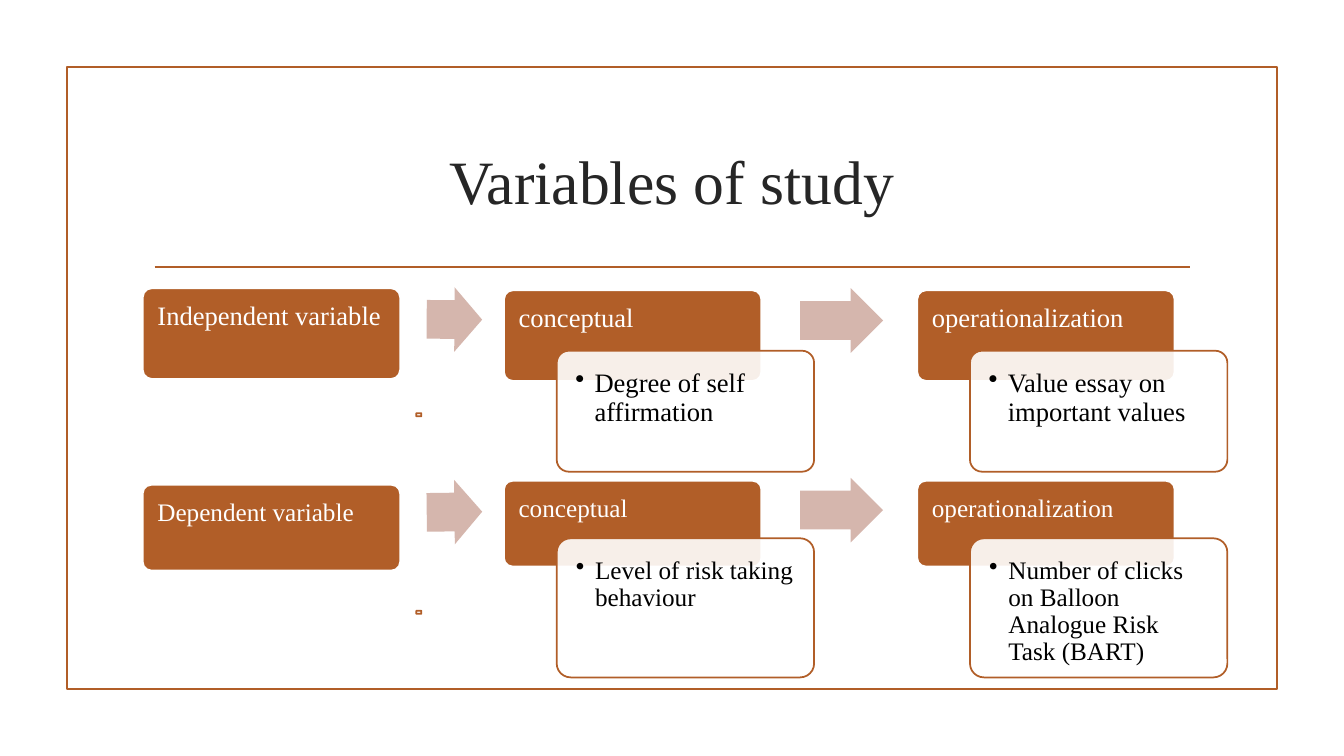
from lxml import etree
from pptx import Presentation
from pptx import util as u
from pptx.dml.color import RGBColor
from pptx.enum import shapes, text
from pptx.oxml.ns import qn

RUST = RGBColor(0xB1, 0x5E, 0x28)
ROSE = RGBColor(0xD5, 0xB6, 0xAD)
WHITE = RGBColor(0xFF, 0xFF, 0xFF)
BLACK = RGBColor(0, 0, 0)
CHARCOAL = RGBColor(0x26, 0x26, 0x26)

COLUMNS, ROWS = 40, 22.5
CARD_WIDTH = 7.66
DETAIL_SHIFT = 1.57
LABEL_LEFT, CONCEPT_LEFT, OPERATION_LEFT = 4.25, 15, 27.3


def write(frame, content, size, color, align=text.PP_ALIGN.LEFT,
          anchor=text.MSO_ANCHOR.TOP, inset=0.1, spacing=None, bullet=False):
    frame.word_wrap = True
    frame.auto_size = text.MSO_AUTO_SIZE.NONE
    frame.vertical_anchor = anchor
    frame.margin_left = frame.margin_right = u.Inches(inset)
    frame.margin_top = frame.margin_bottom = u.Inches(inset)
    paragraph = frame.paragraphs[0]
    if bullet:
        properties = paragraph._p.get_or_add_pPr()
        properties.set("marL", str(u.Inches(0.19)))
        properties.set("indent", str(-u.Inches(0.19)))
        etree.SubElement(properties, qn("a:buChar"), char="•")
    paragraph.alignment = align
    if spacing:
        paragraph.line_spacing = spacing
    run = paragraph.add_run()
    run.text = content
    run.font.name = "Times New Roman"
    run.font.size = u.Pt(size)
    run.font.color.rgb = color


class VariablesSlide:
    """Places elements on a grid of COLUMNS by ROWS cells."""

    def __init__(self, deck):
        self.cell_width = deck.slide_width / COLUMNS
        self.cell_height = deck.slide_height / ROWS
        self.slide = deck.slides.add_slide(deck.slide_layouts[5])

    def place(self, left, top, width, height):
        return (round(left * self.cell_width), round(top * self.cell_height),
                round(width * self.cell_width), round(height * self.cell_height))

    def shape(self, kind, area, fill=None, line=None, opacity=100):
        item = self.slide.shapes.add_shape(kind, *self.place(*area))
        item.shadow.inherit = False
        if fill is None:
            item.fill.background()
        else:
            item.fill.solid()
            item.fill.fore_color.rgb = fill
            if opacity < 100:
                color = item.fill._xPr.find(".//" + qn("a:srgbClr"))
                etree.SubElement(color, qn("a:alpha"), val=str(opacity * 1000))
        if line is None:
            item.line.fill.background()
        else:
            item.line.color.rgb = line
            item.line.width = u.Pt(1.25)
        return item

    def title(self, content, area):
        heading = self.slide.shapes.title
        heading.left, heading.top, heading.width, heading.height = self.place(*area)
        write(heading.text_frame, content, 44, CHARCOAL,
              align=text.PP_ALIGN.CENTER, anchor=text.MSO_ANCHOR.MIDDLE)

    def rule(self, left, right, top):
        x, y, length, _ = self.place(left, top, right - left, 0)
        divider = self.slide.shapes.add_connector(
            shapes.MSO_CONNECTOR.STRAIGHT, x, y, x + length, y)
        divider.line.color.rgb = RUST
        divider.line.width = u.Pt(1.25)
        etree.SubElement(divider._element.spPr, qn("a:effectLst"))

    def card(self, area, fill, line, opacity=100):
        box = self.shape(shapes.MSO_SHAPE.ROUNDED_RECTANGLE, area, fill, line, opacity)
        box.adjustments[0] = 0.1
        return box

    def header(self, content, area, size):
        write(self.card(area, RUST, WHITE).text_frame, content, size, WHITE,
              inset=0.12, spacing=0.9)

    def detail(self, content, area, size):
        write(self.card(area, WHITE, RUST, 90).text_frame, content, size, BLACK,
              inset=0.15, spacing=0.9, bullet=True)

    def arrow(self, left, top, width, rotation=0):
        pointer = self.shape(shapes.MSO_SHAPE.RIGHT_ARROW, (left, top, width, 1.92), ROSE)
        pointer.adjustments[0] = 0.6
        pointer.adjustments[1] = 0.5
        pointer.rotation = rotation

    def variable(self, label, concept, operation, label_top, top, header_height,
                 detail_drop, detail_height, marker_top, arrow_tops, tilt, size):
        """Draws one row: the variable, its concept and its operationalization."""
        self.header(label, (LABEL_LEFT, label_top, CARD_WIDTH, header_height), size)
        self.card((12.39, marker_top, 0.15, 0.09), WHITE, RUST, 90)
        self.arrow(12.7, arrow_tops[0], 1.65, tilt)
        self.arrow(23.81, arrow_tops[1], 2.47)
        for left, stage, meaning in ((CONCEPT_LEFT, "conceptual", concept),
                                     (OPERATION_LEFT, "operationalization", operation)):
            self.header(stage, (left, top, CARD_WIDTH, header_height), size)
            self.detail(meaning, (left + DETAIL_SHIFT, top + detail_drop,
                                  CARD_WIDTH, detail_height), size)


def main():
    deck = Presentation()
    deck.slide_width, deck.slide_height = u.Inches(13.33), u.Inches(7.5)
    page = VariablesSlide(deck)
    page.shape(shapes.MSO_SHAPE.RECTANGLE, (2, 2, 36, 18.5), line=RUST)
    page.rule(4.6, 35.43, 7.95)
    page.title("Variables of study", (4.25, 3.2, 31.5, 4.3))
    page.variable("Independent variable", "Degree of self affirmation",
                  "Value essay on important values",
                  label_top=8.58, top=8.64, header_height=2.7, detail_drop=1.8,
                  detail_height=3.6, marker_top=12.3, arrow_tops=(8.55, 8.58),
                  tilt=0.3, size=19)
    page.variable("Dependent variable", "Level of risk taking behaviour",
                  "Number of clicks on Balloon Analogue Risk Task (BART)",
                  label_top=14.43, top=14.31, header_height=2.55, detail_drop=1.71,
                  detail_height=4.14, marker_top=18.18, arrow_tops=(14.28, 14.22),
                  tilt=-0.7, size=18)
    deck.save("out.pptx")


if __name__ == "__main__":
    main()
